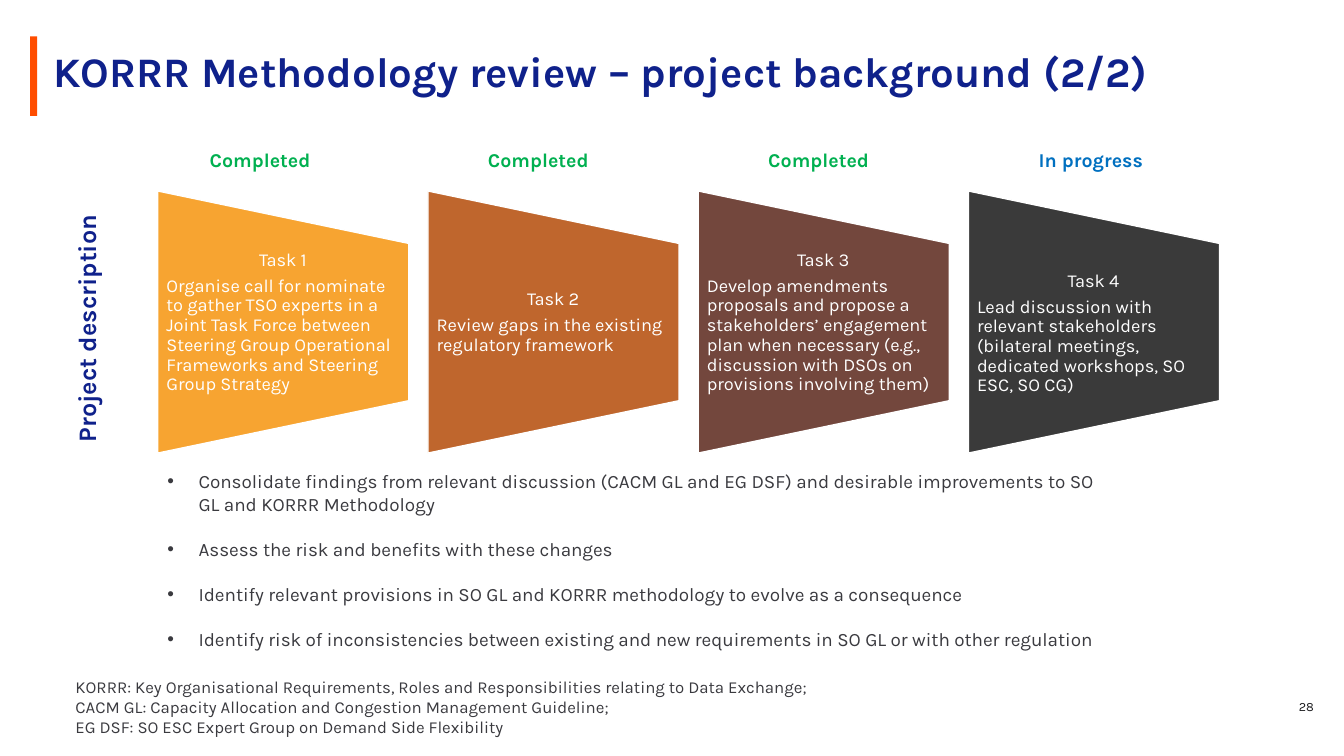
"""Build the KORRR project background slide."""
from dataclasses import dataclass

from lxml.etree import SubElement
from pptx import Presentation
from pptx.dml.color import RGBColor
from pptx.enum.shapes import MSO_SHAPE as Shape
from pptx.enum.text import MSO_ANCHOR as Anchor, MSO_AUTO_SIZE as Fit, PP_ALIGN as Align
from pptx.oxml.ns import qn
from pptx.util import Inches, Pt

FONT = "Karla"
NAVY, ORANGE, WHITE, GREY = "0F218B", "FF4D00", "FFFFFF", "3A3A3F"
GREEN, BLUE = "00B050", "0070C0"
LEFT, STEP = 1.51, 2.68


@dataclass
class Task:
    name: str
    text: str
    fill: str
    state: str
    hue: str
    mark: float
    top: float = 2.42


TASKS = [
    Task("Task 1", "Organise call for nominate to gather TSO experts in a Joint Task Force "
         "between Steering Group Operational Frameworks and Steering Group Strategy",
         "F7A431", "Completed", GREEN, 1.7),
    Task("Task 2", "Review gaps in the existing regulatory framework",
         "BF662D", "Completed", GREEN, 4.46),
    Task("Task 3", "Develop amendments proposals and propose a stakeholders’ engagement plan "
         "when necessary (e.g., discussion with DSOs on provisions involving them)",
         "73473D", "Completed", GREEN, 7.24),
    Task("Task 4", "Lead discussion with relevant stakeholders (bilateral meetings, "
         "dedicated workshops, SO ESC, SO CG)",
         "3A3A3A", "In progress", BLUE, 9.94, 2.53),
]
POINTS = [
    "Consolidate findings from relevant discussion (CACM GL and EG DSF) and desirable "
    "improvements to SO GL and KORRR Methodology",
    "Assess the risk and benefits with these changes",
    "Identify relevant provisions in SO GL and KORRR methodology to evolve as a consequence",
    "Identify risk of inconsistencies between existing and new requirements in SO GL "
    "or with other regulation",
]
NOTES = [
    "KORRR: Key Organisational Requirements, Roles and Responsibilities relating to Data Exchange;",
    "CACM GL: Capacity Allocation and Congestion Management Guideline;",
    "EG DSF: SO ESC Expert Group on Demand Side Flexibility",
]


def tint(code: str) -> RGBColor:
    """Turn a hex string into a colour."""
    return RGBColor.from_string(code)


def place(shape, left: float, top: float, width: float, height: float) -> None:
    """Move and size a shape in inches."""
    shape.left, shape.top = Inches(left), Inches(top)
    shape.width, shape.height = Inches(width), Inches(height)


def write(shape, lines: list[str], size: float, hue: str, bold: bool = False,
          align: Align = Align.LEFT, anchor: Anchor = Anchor.TOP) -> list:
    """Fill a shape with formatted paragraphs and return them."""
    frame = shape.text_frame
    frame.text = "\n".join(lines)
    frame.word_wrap = True
    frame.auto_size = Fit.NONE
    frame.vertical_anchor = anchor
    for para in frame.paragraphs:
        para.alignment = align
        para.line_spacing = 1.0
        para.space_before = Pt(0)
        for run in para.runs:
            font = run.font
            font.name, font.size, font.bold = FONT, Pt(size), bold
            font.color.rgb = tint(hue)
    return list(frame.paragraphs)


def label(slide, box: tuple, lines: list[str], size: float, hue: str, **style):
    """Add a text box and return it."""
    shape = slide.shapes.add_textbox(*map(Inches, box))
    write(shape, lines, size, hue, **style)
    return shape


def block(slide, kind: Shape, box: tuple, fill: str):
    """Add a plain filled shape."""
    shape = slide.shapes.add_shape(kind, *map(Inches, box))
    shape.shadow.inherit = False
    shape.fill.solid()
    shape.fill.fore_color.rgb = tint(fill)
    shape.line.fill.background()
    return shape


def draw(slide, task: Task, left: float) -> None:
    """Draw one task with its status."""
    shape = block(slide, Shape.FLOWCHART_MANUAL_OPERATION, (left, 1.95, 2.6, 2.49), task.fill)
    shape.rotation = 270
    shape.line.color.rgb = tint(WHITE)
    shape.line.width = Pt(1)
    card = label(slide, (left + 0.05, task.top, 2.49, 1.56), [task.name, task.text],
                 13, WHITE, anchor=Anchor.MIDDLE)
    frame = card.text_frame
    frame.margin_left = frame.margin_right = Inches(0.09)
    frame.margin_top = frame.margin_bottom = 0
    for para in frame.paragraphs:
        para.line_spacing = 0.9
        para.space_after = Pt(4.55)
    frame.paragraphs[0].alignment = Align.CENTER
    label(slide, (task.mark, 1.42, 1.76, 0.34), [task.state], 14, task.hue,
          bold=True, align=Align.CENTER)


def bullet(para) -> None:
    """Give a paragraph a hanging bullet."""
    props = para._p.get_or_add_pPr()
    props.set("marL", str(Inches(0.31)))
    props.set("indent", str(-Inches(0.31)))
    SubElement(props, qn("a:buFont"), typeface="Arial")
    SubElement(props, qn("a:buChar"), char="•")


def main() -> None:
    """Build and save the slide."""
    deck = Presentation()
    deck.slide_width, deck.slide_height = Inches(13.33), Inches(7.5)
    slide = deck.slides.add_slide(deck.slide_layouts[1])
    title, body = slide.placeholders

    place(title, 0.43, 0.31, 12.47, 0.84)
    head = write(title, ["KORRR Methodology review – project background (2/2)"],
                 30, NAVY, bold=True, anchor=Anchor.MIDDLE)
    head[0].line_spacing = 0.9
    block(slide, Shape.RECTANGLE, (0.3, 0.36, 0.07, 0.79), ORANGE)

    side = label(slide, (-0.51, 2.92, 2.73, 0.4), ["Project description"], 18, NAVY, bold=True)
    side.rotation = 270
    for col, task in enumerate(TASKS):
        draw(slide, task, LEFT + col * STEP)

    place(body, 1.56, 4.61, 9.52, 1.92)
    for row, para in enumerate(write(body, POINTS, 13.5, GREY)):
        para.space_before = Pt(16 if row else 0)
        bullet(para)

    label(slide, (0.65, 6.66, 10.18, 0.71), NOTES, 12, GREY)
    page = label(slide, (6.75, 6.82, 6.38, 0.4), ["28"], 9, "1D1D20",
                 align=Align.RIGHT, anchor=Anchor.MIDDLE)
    page.text_frame.paragraphs[0].line_spacing = Pt(9)
    deck.save("out.pptx")


if __name__ == "__main__":
    main()
